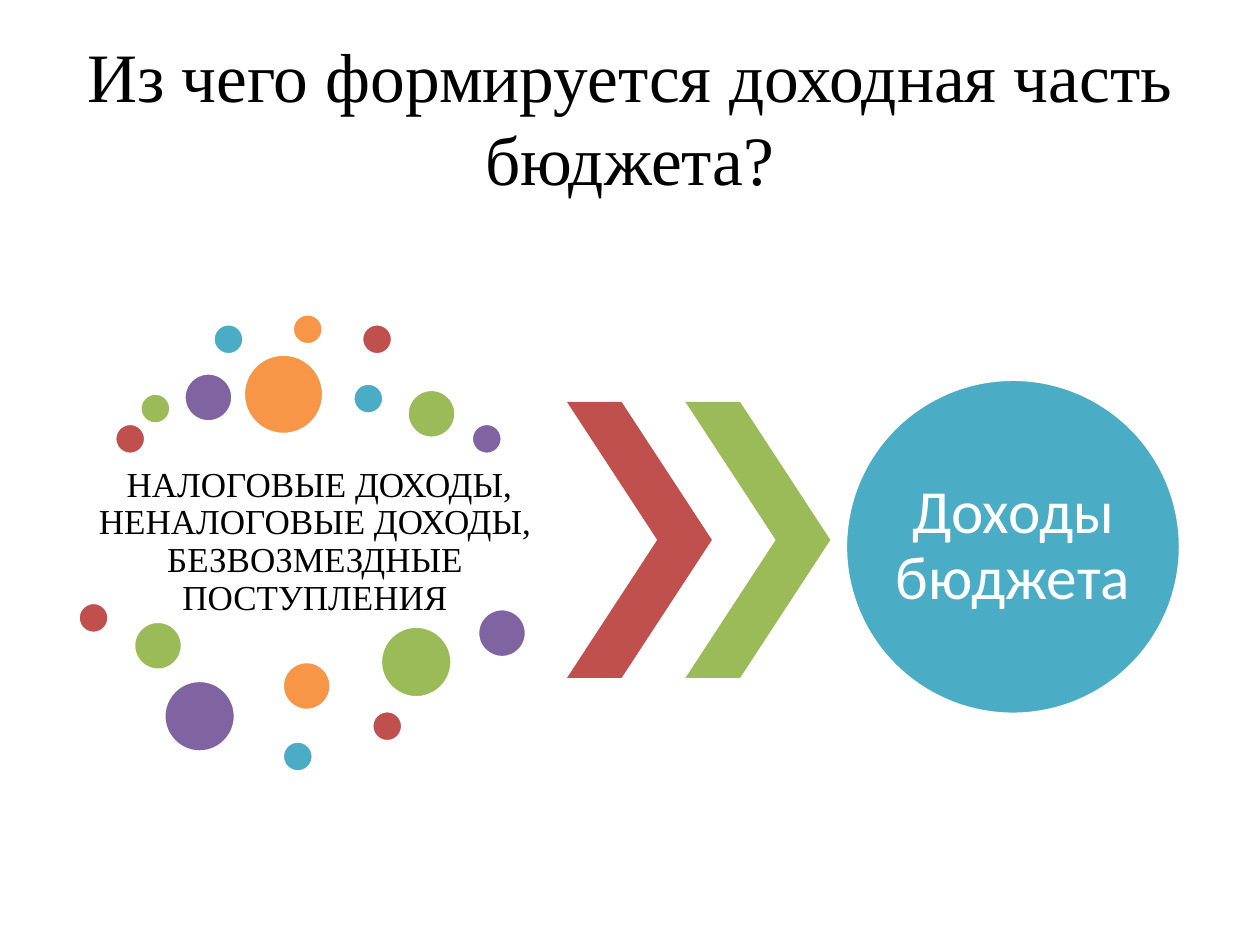
from dataclasses import dataclass
from itertools import cycle
from typing import NamedTuple

from pptx import Presentation
from pptx.dml.color import RGBColor
from pptx.enum.shapes import MSO_SHAPE
from pptx.enum.text import MSO_ANCHOR, PP_ALIGN
from pptx.util import Pt

OVAL, CHEVRON = MSO_SHAPE.OVAL, MSO_SHAPE.CHEVRON
MIDDLE, CENTER = MSO_ANCHOR.MIDDLE, PP_ALIGN.CENTER


class Box(NamedTuple):
    left: float
    top: float
    width: float
    height: float


class Dot(NamedTuple):
    left: float
    top: float
    size: float


class Style(NamedTuple):
    font: str
    size: float
    color: RGBColor


@dataclass(frozen=True)
class Theme:
    white: RGBColor = RGBColor(0xFF, 0xFF, 0xFF)
    black: RGBColor = RGBColor(0, 0, 0)
    red: RGBColor = RGBColor(0xC0, 0x50, 0x4D)
    green: RGBColor = RGBColor(0x9B, 0xBB, 0x59)
    purple: RGBColor = RGBColor(0x80, 0x64, 0xA2)
    teal: RGBColor = RGBColor(0x4B, 0xAC, 0xC6)
    orange: RGBColor = RGBColor(0xF7, 0x96, 0x46)
    serif: str = "Times New Roman"
    sans: str = "Calibri"
    title: float = 39.6
    label: float = 20
    result: float = 35
    edge: float = 2


THEME = Theme()
ACCENTS = (THEME.red, THEME.green, THEME.purple, THEME.teal, THEME.orange)

# Dot diameters
S, M, L, XL = 17.8, 28, 41, 46

# Dots above and below the label, coloured in turn
DOTS = (
    Dot(65.5, 241.9, S), Dot(79.9, 224.6, S), Dot(105.1, 213.1, M),
    Dot(121.7, 185, S), Dot(167, 179.3, S), Dot(206.6, 185, S),
    Dot(232.6, 222.5, M), Dot(269.3, 241.9, S), Dot(201.6, 218.9, S),
    Dot(139, 202.3, XL),
    Dot(44.6, 344.2, S), Dot(76.3, 355, M), Dot(93.6, 388.8, L),
    Dot(161.3, 423.4, S), Dot(161.3, 378, M), Dot(212.4, 406.1, S),
    Dot(217.4, 357.8, L), Dot(272.9, 347.8, M),
)


def place(box: Box) -> list:
    return [Pt(value) for value in box]


def add_form(slide, kind, box: Box, color: RGBColor, edged: bool = True):
    form = slide.shapes.add_shape(kind, *place(box))
    form.shadow.inherit = False
    form.fill.solid()
    form.fill.fore_color.rgb = color
    if edged:
        form.line.color.rgb = THEME.white
        form.line.width = Pt(THEME.edge)
    else:
        form.line.fill.background()
    return form


def set_text(shape, text: str, style: Style, spacing: float = 1) -> None:
    frame = shape.text_frame
    frame.word_wrap = True
    frame.vertical_anchor = MIDDLE
    frame.text = text
    para = frame.paragraphs[0]
    para.alignment = CENTER
    para.line_spacing = spacing
    para.font.name = style.font
    para.font.size = Pt(style.size)
    para.font.color.rgb = style.color


def add_label(slide, box: Box, text: str, style: Style, inset: float) -> None:
    label = slide.shapes.add_textbox(*place(box))
    frame = label.text_frame
    frame.margin_left = frame.margin_right = Pt(inset)
    frame.margin_top = frame.margin_bottom = Pt(inset)
    set_text(label, text, style, 0.9)


def main() -> None:
    deck = Presentation()
    deck.slide_width, deck.slide_height = Pt(720), Pt(540)
    slide = deck.slides.add_slide(deck.slide_layouts[5])

    # Title
    title = slide.shapes.title
    title.left, title.top, title.width, title.height = place(
        Box(36, 21.6, 648, 90))
    set_text(title, "Из чего формируется доходная часть бюджета?",
             Style(THEME.serif, THEME.title, THEME.black))

    # Sources of income among the dots
    add_label(slide, Box(36, 272.9, 288, 74.2),
              " НАЛОГОВЫЕ ДОХОДЫ, НЕНАЛОГОВЫЕ ДОХОДЫ, "
              "БЕЗВОЗМЕЗДНЫЕ ПОСТУПЛЕНИЯ",
              Style(THEME.serif, THEME.label, THEME.black), 2)
    for dot, color in zip(DOTS, cycle(ACCENTS)):
        add_form(slide, OVAL, Box(dot.left, dot.top, dot.size, dot.size), color)

    # Chevrons
    for i, color in enumerate((THEME.red, THEME.green)):
        arrow = add_form(slide, CHEVRON, Box(324 + 67.7 * i, 229.7, 82.8, 157.7),
                         color, edged=False)
        arrow.adjustments[0] = 0.623

    # Result
    add_form(slide, OVAL, Box(483.1, 216.7, 191.5, 191.5), THEME.teal)
    add_label(slide, Box(511.2, 244.8, 135.4, 135.4), "Доходы бюджета",
              Style(THEME.sans, THEME.result, THEME.white), 0)

    deck.save("out.pptx")


if __name__ == "__main__":
    main()
